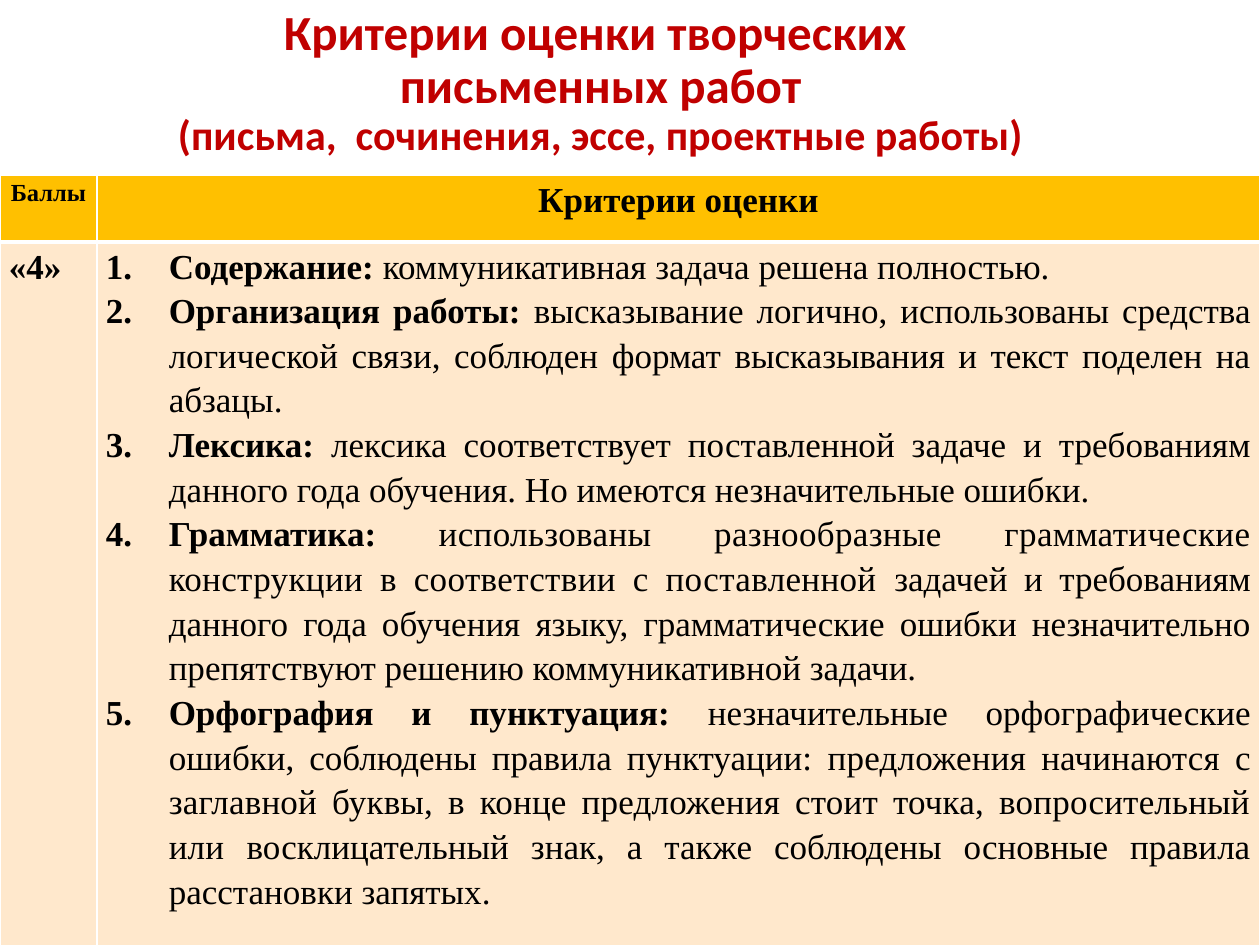
from lxml import etree
from pptx import Presentation
from pptx.dml.color import RGBColor
from pptx.enum.text import MSO_ANCHOR, PP_ALIGN
from pptx.oxml.ns import qn
from pptx.util import Inches, Pt

CENTER, JUSTIFY = PP_ALIGN.CENTER, PP_ALIGN.JUSTIFY
MIDDLE = MSO_ANCHOR.MIDDLE
COLORS = {"title": "C00000", "text": "000000", "head": "FFC000",
          "body": "FFE8CC", "border": "FFFFFF"}

# Content: each run is (text, bold, letter spacing in points)
TITLE = [
    ("Критерии оценки творческих ", 28),
    ("письменных работ", 28),
    ("(письма,  сочинения, эссе, проектные работы)", 24),
]
HEADINGS = [("Баллы", 14), ("Критерии оценки", 20)]
SCORE = "«4»"
CRITERIA = [
    [("Содержание: ", True, 0),
     ("коммуникативная задача решена полностью.", False, 0)],
    [("Организация работы: ", True, 0),
     ("высказывание логично, использованы средства логической связи, "
      "соблюден формат высказывания и текст поделен на абзацы.", False, 0)],
    [("Лексика: ", True, 0),
     ("лексика соответствует поставленной задаче и требованиям данного года "
      "обучения. Но имеются незначительные ошибки.", False, 0)],
    [("Грамматика: ", True, 0),
     ("использованы разнообразные грамматические конструкции в соответствии "
      "с поставленной ", False, 0.2),
     ("задачей и требованиям данного года обучения языку, грамматические ошибки "
      "незначительно препятствуют решению коммуникативной задачи.", False, 0)],
    [("Орфография и пунктуация: ", True, 0),
     ("незначительные орфографические ошибки, соблюдены правила пунктуации: ",
      False, 0),
     ("предложения начинаются с заглавной буквы, в конце предложения стоит точка, "
      "вопросительный или ", False, 0.1),
     ("восклицательный знак, а также соблюдены основные правила расстановки "
      "запятых.", False, 0)],
]
COLUMNS = [0.77, 9.23]
ROWS = [0.53, 5.58]
TABLE_TOP = 1.39


def add_text(para, text, size=20, bold=True, font="Times New Roman",
             color="text", spacing=0):
    span = para.add_run()
    span.text = text
    span.font.name = font
    span.font.size = Pt(size)
    span.font.bold = bold
    span.font.color.rgb = RGBColor.from_string(COLORS[color])
    if spacing:
        span.font._element.set("spc", str(round(spacing * 100)))


def number_paragraph(para):
    properties = para._p.get_or_add_pPr()
    properties.set("marL", str(Inches(0.5)))
    properties.set("indent", str(Inches(-0.5)))
    etree.SubElement(properties, qn("a:buFont"), typeface="+mj-lt")
    etree.SubElement(properties, qn("a:buAutoNum"), type="arabicPeriod")


def style_cell(cell, fill, widths):
    cell.margin_left = cell.margin_right = Inches(0.07)
    cell.margin_top = cell.margin_bottom = 0
    properties = cell._tc.get_or_add_tcPr()
    for side, width in zip("LRTB", widths):
        line = etree.SubElement(properties, qn(f"a:ln{side}"), w=str(Pt(width)))
        solid = etree.SubElement(line, qn("a:solidFill"))
        etree.SubElement(solid, qn("a:srgbClr"), val=COLORS["border"])
    cell.fill.solid()
    cell.fill.fore_color.rgb = RGBColor.from_string(COLORS[fill])


def next_paragraph(frame, index, align, spacing):
    para = frame.add_paragraph() if index else frame.paragraphs[0]
    para.alignment = align
    para.line_spacing = spacing
    return para


deck = Presentation()
deck.slide_width, deck.slide_height = Inches(10), Inches(7.5)
page = deck.slides.add_slide(deck.slide_layouts[6])

# Title, raised by a deep bottom margin
box = page.shapes.add_textbox(Inches(0.22), 0, Inches(9.09), Inches(1.7))
frame = box.text_frame
frame.word_wrap = True
frame.vertical_anchor = MIDDLE
frame.margin_bottom = Inches(0.42)
for index, (text, size) in enumerate(TITLE):
    para = next_paragraph(frame, index, CENTER, 0.9)
    add_text(para, text, size=size, font="Calibri", color="title")

# Table grid
table = page.shapes.add_table(len(ROWS), len(COLUMNS), 0, Inches(TABLE_TOP),
                              Inches(sum(COLUMNS)), Inches(sum(ROWS))).table
for column, width in zip(table.columns, COLUMNS):
    column.width = Inches(width)
for row, height in zip(table.rows, ROWS):
    row.height = Inches(height)

# Header row
for column, (text, size) in enumerate(HEADINGS):
    cell = table.cell(0, column)
    style_cell(cell, "head", (1, 1, 1, 3))
    add_text(next_paragraph(cell.text_frame, 0, CENTER, 1.15), text, size=size)

# Score and its numbered criteria
score_cell, criteria_cell = table.cell(1, 0), table.cell(1, 1)
for cell in (score_cell, criteria_cell):
    style_cell(cell, "body", (1, 1, 3, 1))
add_text(next_paragraph(score_cell.text_frame, 0, JUSTIFY, 1.15), SCORE)
for index, runs in enumerate(CRITERIA):
    para = next_paragraph(criteria_cell.text_frame, index, JUSTIFY, 1.15)
    number_paragraph(para)
    for text, bold, spacing in runs:
        add_text(para, text, bold=bold, spacing=spacing)

deck.save("out.pptx")
